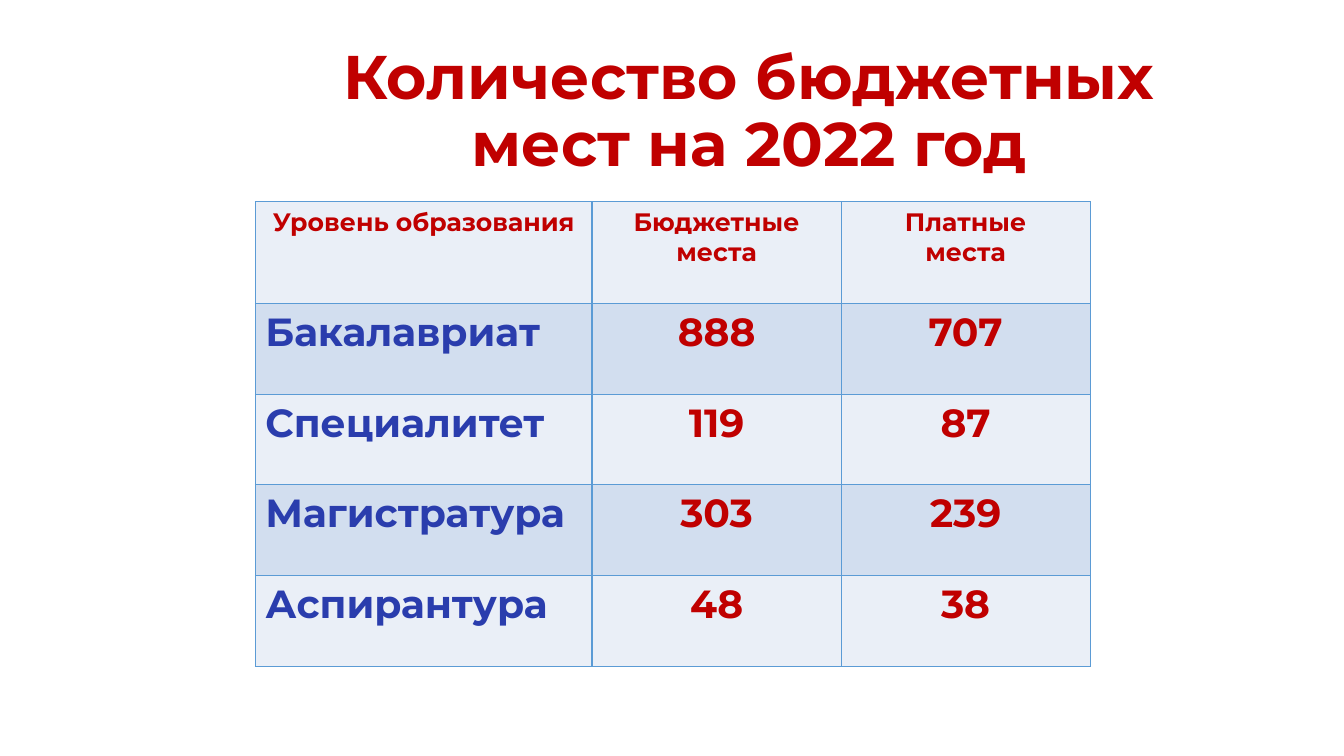
from dataclasses import dataclass
from lxml.etree import SubElement as Sub
from pptx import Presentation
from pptx.dml.color import RGBColor as Rgb
from pptx.enum.text import MSO_ANCHOR as Anchor, PP_ALIGN as Align
from pptx.oxml.ns import qn
from pptx.util import Inches, Pt


@dataclass(frozen=True)
class Theme:
    font: str = "Montserrat"
    red: str = "C00000"
    blue: str = "2A3DAD"
    line: str = "5B9BD5"
    bands: tuple = ("EAEFF7", "D2DEEF")
    title: int = 44
    head: int = 18
    body: int = 28


THEME = Theme()
WIDE, HIGH = 13.33, 7.5
COLS = (3.34, 2.47, 2.47)
ROWS = (1.01,) + (0.9,) * 4
DATA = (
    ("Уровень образования", "Бюджетные места", "Платные\nместа"),
    ("Бакалавриат", "888", "707"),
    ("Специалитет", "119", "87"),
    ("Магистратура", "303", "239"),
    ("Аспирантура", "48", "38"),
)


def write(frame, text, size, color, align):
    frame.text = text
    for para in frame.paragraphs:
        para.alignment = align
        font = para.font
        font.name, font.size, font.bold = THEME.font, Pt(size), True
        font.color.rgb = Rgb.from_string(color)


def edge(cell):
    props = cell._tc.get_or_add_tcPr()
    for at, side in enumerate(("lnL", "lnR", "lnT", "lnB")):
        line = props.makeelement(qn(f"a:{side}"), {"w": str(Pt(1))})
        fill = Sub(line, qn("a:solidFill"))
        Sub(fill, qn("a:srgbClr"), val=THEME.line)
        props.insert(at, line)


def add_title(slide, text):
    title = slide.shapes.title
    title.left, title.top = Inches(0.184 * WIDE), Inches(0.053 * HIGH)
    title.width, title.height = Inches(0.747 * WIDE), Inches(0.193 * HIGH)
    frame = title.text_frame
    write(frame, text, THEME.title, THEME.red, Align.CENTER)
    frame.vertical_anchor = Anchor.MIDDLE
    frame.word_wrap = True
    frame.paragraphs[0].line_spacing = 0.9


def add_grid(slide, data):
    grid = slide.shapes.add_table(
        len(ROWS), len(COLS), Inches(0.19 * WIDE), Inches(2),
        Inches(sum(COLS)), Inches(sum(ROWS))).table
    for col, width in zip(grid.columns, COLS):
        col.width = Inches(width)
    for row, height in zip(grid.rows, ROWS):
        row.height = Inches(height)
    for r, texts in enumerate(data):
        for c, text in enumerate(texts):
            cell = grid.cell(r, c)
            label = r > 0 and c == 0
            write(cell.text_frame, text,
                  THEME.body if r else THEME.head,
                  THEME.blue if label else THEME.red,
                  Align.LEFT if label else Align.CENTER)
            cell.fill.solid()
            cell.fill.fore_color.rgb = Rgb.from_string(THEME.bands[r % 2])
            edge(cell)


def main():
    deck = Presentation()
    deck.slide_width, deck.slide_height = Inches(WIDE), Inches(HIGH)
    slide = deck.slides.add_slide(deck.slide_layouts.get_by_name("Title Only"))
    add_title(slide, "Количество бюджетных мест на 2022 год")
    add_grid(slide, DATA)
    deck.save("out.pptx")


if __name__ == "__main__":
    main()
